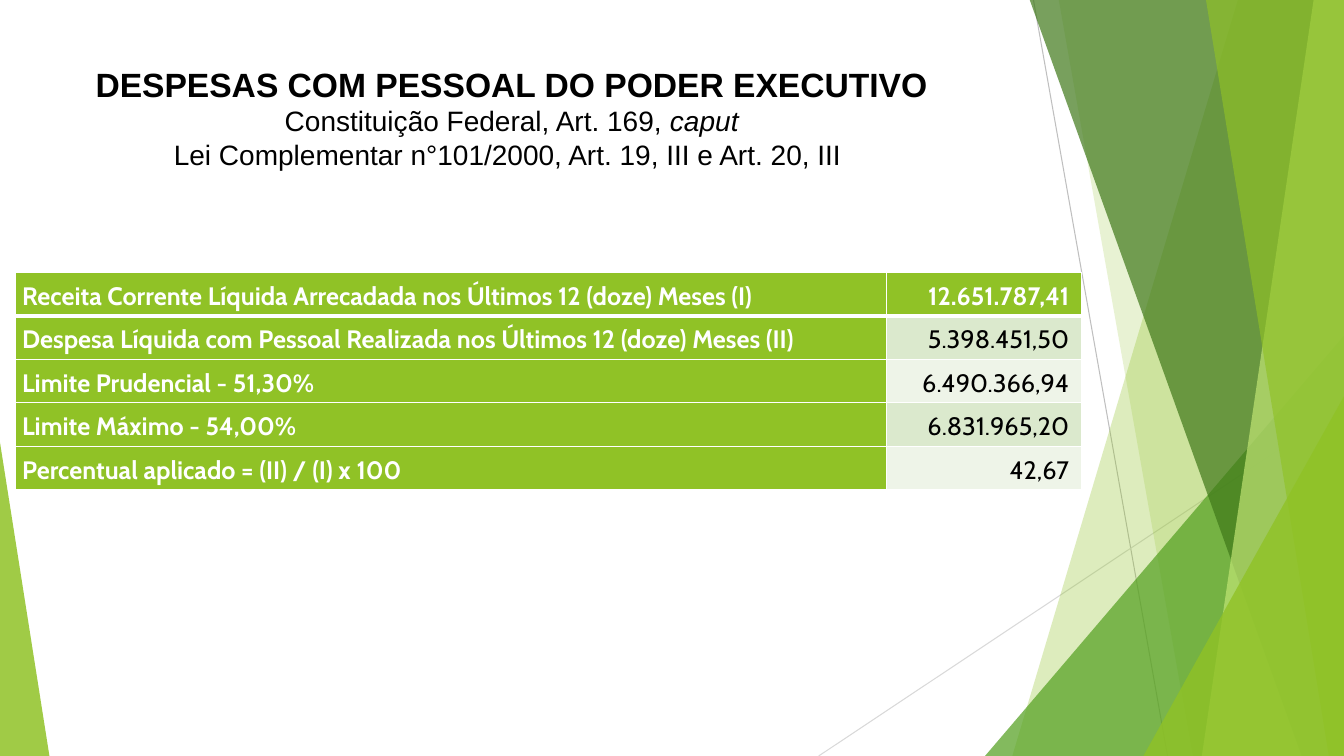
import pptx
import pptx.util
import pptx.dml.color
import pptx.enum.shapes
import pptx.enum.text
import pptx.oxml
import pptx.oxml.ns
import lxml.etree

PX = 9144  # 100 px to the inch
WIDTH, HEIGHT = 1333, 750
COLORS = {
    "lime": "90C226", "green": "54A021", "forest": "3F7819", "pale": "C0E474",
    "line": "BFBFBF", "light_line": "D9D9D9", "white": "FFFFFF",
    "black": "000000", "band_dark": "DBE9CD", "band_light": "EEF4E8",
}
EXPENSES = [
    ("Receita Corrente Líquida Arrecadada nos Últimos 12 (doze) Meses (I)", "12.651.787,41 "),
    ("Despesa Líquida com Pessoal Realizada nos Últimos 12 (doze) Meses (II)", "5.398.451,50 "),
    ("Limite Prudencial - 51,30%", "6.490.366,94 "),
    ("Limite Máximo - 54,00%", "6.831.965,20 "),
    ("Percentual aplicado = (II) / (I) x 100", "42,67 "),
]
TITLE = [
    [("DESPESAS COM PESSOAL DO PODER EXECUTIVO", 24, True, False)],
    [("Constituição Federal, Art. 169, ", 20, False, False), ("caput", 20, False, True)],
    [("Lei Complementar n°101/2000, Art. 19, III e Art. 20, III ", 20, False, False)],
]


def px(*lengths):
    return [pptx.util.Emu(length * PX) for length in lengths]


def rgb(name):
    return pptx.dml.color.RGBColor.from_string(COLORS[name])


def style_font(run, face, size, color, bold, italic=False):
    font = run.font
    font.name, font.size = face, pptx.util.Pt(size)
    font.bold, font.italic = bold, italic
    font.color.rgb = rgb(color)


def paint(facet, color, opacity):
    facet.shadow.inherit = False
    facet.line.fill.background()
    facet.fill.solid()
    facet.fill.fore_color.rgb = rgb(color)
    srgb = facet.fill._xPr.find(".//" + pptx.oxml.ns.qn("a:srgbClr"))
    alpha = lxml.etree.SubElement(srgb, pptx.oxml.ns.qn("a:alpha"))
    alpha.set("val", str(opacity * 1000))


def add_line(slide, start, end, color):
    line = slide.shapes.add_connector(
        pptx.enum.shapes.MSO_CONNECTOR.STRAIGHT, *px(*start, *end))
    line.line.color.rgb = rgb(color)
    line.line.width = pptx.util.Pt(0.75)
    lxml.etree.SubElement(line._element.spPr, pptx.oxml.ns.qn("a:effectLst"))


def add_facet(slide, top_x, bottom_x, color, opacity):
    """Full-height band from a slanted left edge to the right slide edge."""
    builder = slide.shapes.build_freeform(top_x, -1, scale=PX)
    builder.add_line_segments([(WIDTH, -1), (WIDTH, HEIGHT), (bottom_x, HEIGHT)])
    paint(builder.convert_to_shape(), color, opacity)


def add_corner(slide, left, top, width, apex, color, opacity):
    """Triangle standing on the bottom slide edge."""
    corner = slide.shapes.add_shape(
        pptx.enum.shapes.MSO_SHAPE.ISOSCELES_TRIANGLE,
        *px(left, top, width, HEIGHT - top))
    corner.adjustments[0] = apex
    paint(corner, color, opacity)


def add_backdrop(slide):
    add_line(slide, (1025, 0), (1158, HEIGHT), "line")
    add_line(slide, (WIDTH, 403), (812, HEIGHT), "light_line")
    add_facet(slide, 1228, 1004, "lime", 30)
    add_facet(slide, 1050, 1183, "lime", 20)
    add_corner(slide, 977, 333, 356, 1, "green", 72)
    add_facet(slide, 1021, 1291, "forest", 70)
    add_facet(slide, 1303, 1192, "pale", 70)
    add_facet(slide, 1196, 1318, "lime", 65)
    add_corner(slide, 1134, 393, 199, 1, "lime", 80)
    add_corner(slide, 0, 439, 49, 0, "lime", 85)


def fill_title(heading):
    heading.left, heading.top, heading.width, heading.height = px(81, 54, 853, 148)
    frame = heading.text_frame
    frame.auto_size = pptx.enum.text.MSO_AUTO_SIZE.NONE
    frame.vertical_anchor = pptx.enum.text.MSO_ANCHOR.TOP
    frame.margin_top = px(9)[0]
    for index, pieces in enumerate(TITLE):
        paragraph = frame.add_paragraph() if index else frame.paragraphs[0]
        paragraph.alignment = pptx.enum.text.PP_ALIGN.CENTER
        for text, size, bold, italic in pieces:
            run = paragraph.add_run()
            run.text = text
            style_font(run, "Arial", size, "black", bold, italic)


def set_borders(cell, top, bottom):
    properties = cell._tc.get_or_add_tcPr()
    sides = (("lnL", 1), ("lnR", 1), ("lnT", top), ("lnB", bottom))
    for position, (side, points) in enumerate(sides):
        properties.insert(position, pptx.oxml.parse_xml(
            f'<a:{side} {pptx.oxml.ns.nsdecls("a")} w="{pptx.util.Pt(points)}">'
            f'<a:solidFill><a:srgbClr val="{COLORS["white"]}"/></a:solidFill></a:{side}>'))


def fill_cell(cell, text, fill, color, bold, alignment):
    cell.fill.solid()
    cell.fill.fore_color.rgb = rgb(fill)
    cell.margin_left, cell.margin_right, cell.margin_top, cell.margin_bottom = px(7, 7, 1, 1)
    cell.vertical_anchor = pptx.enum.text.MSO_ANCHOR.MIDDLE
    paragraph = cell.text_frame.paragraphs[0]
    paragraph.text = text
    paragraph.alignment = alignment
    paragraph.line_spacing = 1.15
    style_font(paragraph.runs[0], "Cabin", 18, color, bold)


def add_expenses(slide):
    table = slide.shapes.add_table(len(EXPENSES), 2, *px(15, 270, 1058, 216)).table
    for column, width in zip(table.columns, px(864, 194)):
        column.width = width
    align = pptx.enum.text.PP_ALIGN
    for index, (label, amount) in enumerate(EXPENSES):
        label_cell, amount_cell = table.cell(index, 0), table.cell(index, 1)
        fill_cell(label_cell, label, "lime", "white", True, align.LEFT)
        if index == 0:
            fill_cell(amount_cell, amount, "lime", "white", True, align.RIGHT)
        else:
            band = "band_dark" if index % 2 else "band_light"
            fill_cell(amount_cell, amount, band, "black", False, align.RIGHT)
        # Thick rule under the first row
        for cell in (label_cell, amount_cell):
            set_borders(cell, 3 if index == 1 else 1, 3 if index == 0 else 1)


def main():
    deck = pptx.Presentation()
    deck.slide_width, deck.slide_height = px(WIDTH, HEIGHT)
    slide = deck.slides.add_slide(deck.slide_layouts[5])
    add_backdrop(slide)
    add_expenses(slide)
    fill_title(slide.shapes.title)
    deck.save("out.pptx")


if __name__ == "__main__":
    main()
